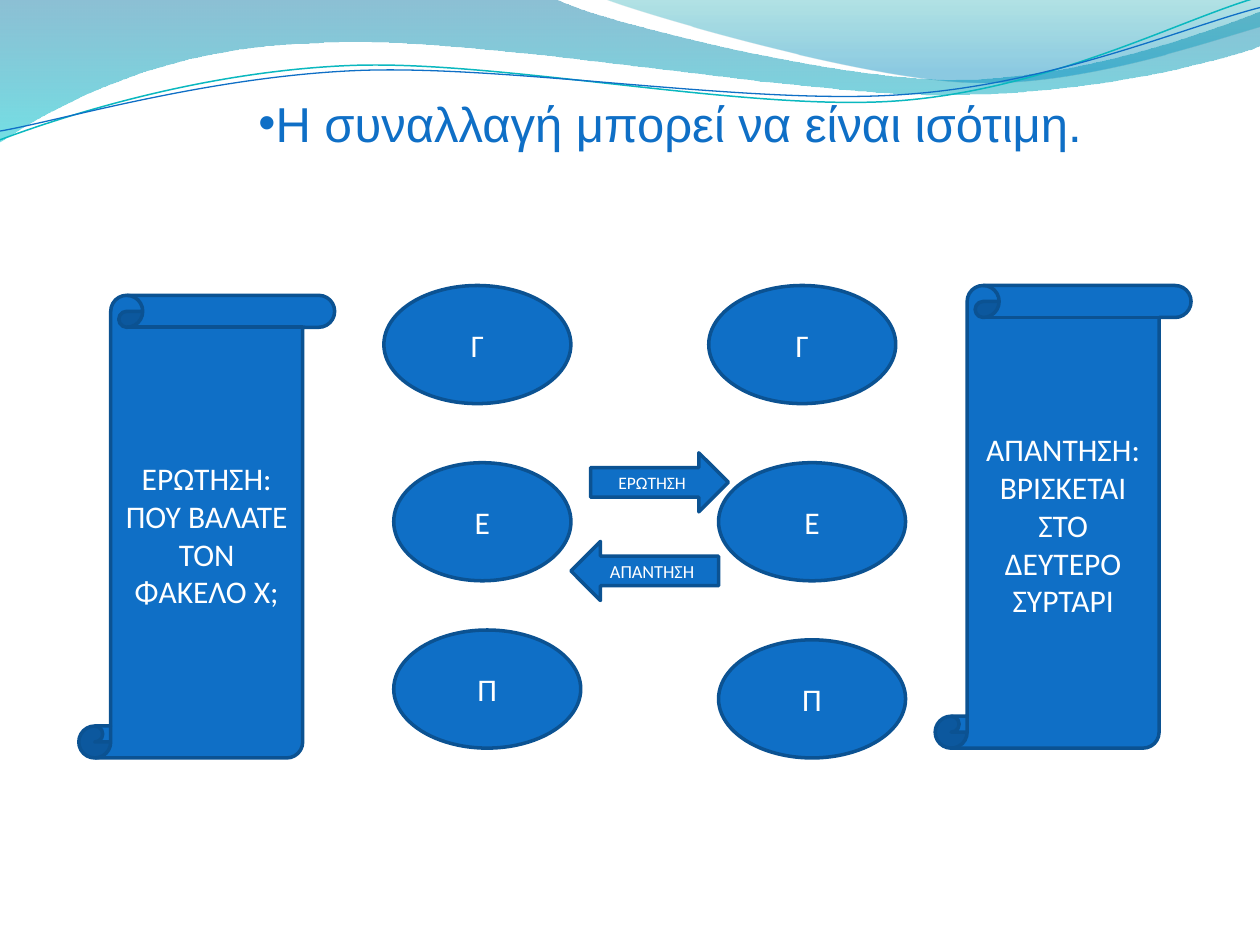
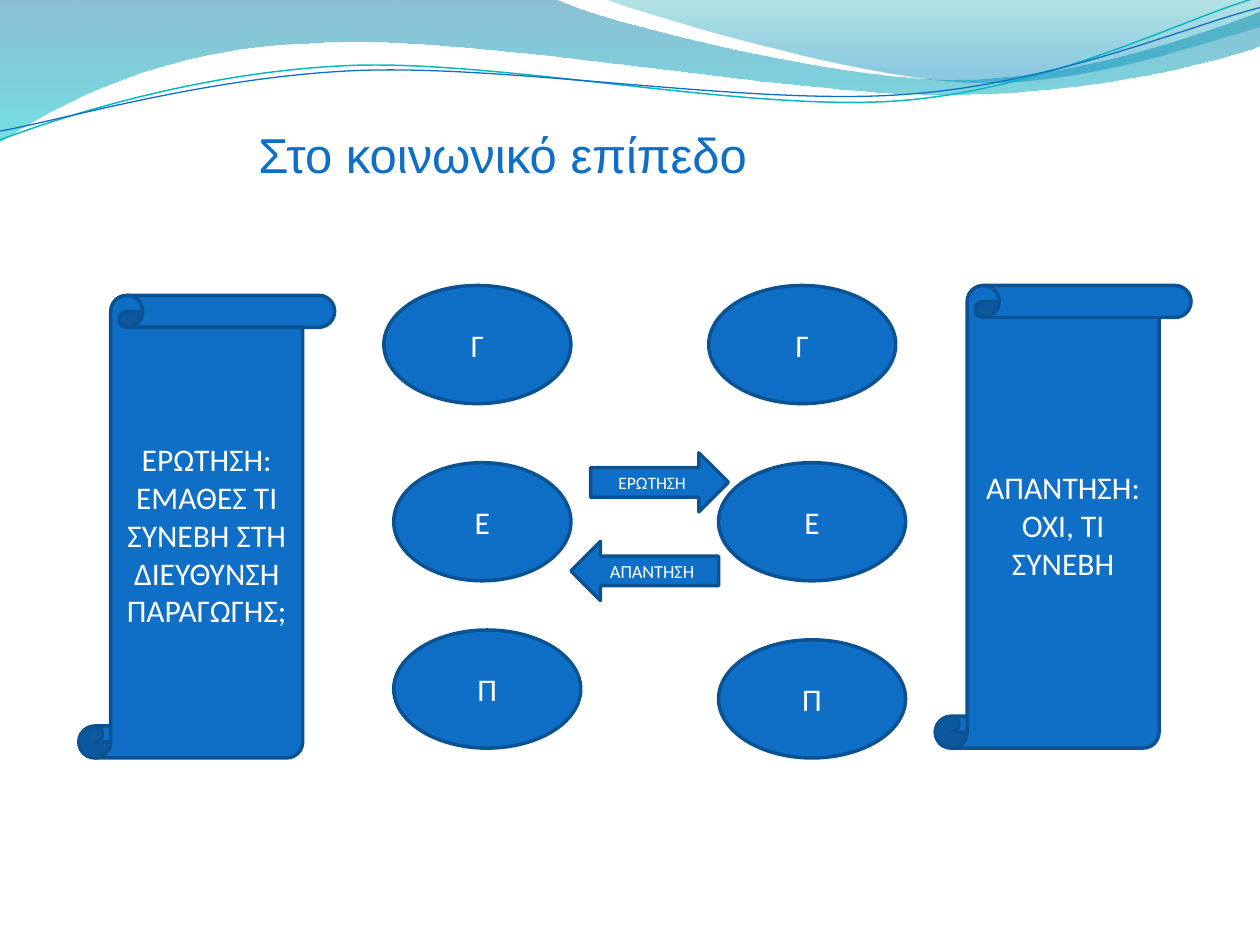
import math
from typing import NamedTuple

from lxml import etree
from pptx import Presentation, slide as sl, util as u
from pptx.dml import color
from pptx.enum import shapes, text
from pptx.oxml import ns
from pptx.shapes import autoshape as auto
from pptx.text import text as tx

BLUE = color.RGBColor(0x0F, 0x6F, 0xC6)
NAVY = color.RGBColor(0x0B, 0x52, 0x92)
TEAL = color.RGBColor(0x0A, 0xB8, 0xBF)
WHITE = color.RGBColor(0xFF, 0xFF, 0xFF)
DEEP = color.RGBColor(0x00, 0x74, 0xA1)
AQUA = color.RGBColor(0x00, 0xC6, 0xCF)
SEA = color.RGBColor(0x00, 0xA1, 0xA9)
SKY = color.RGBColor(0x00, 0x8B, 0xBF)

WIDE, HIGH = u.Inches(10), u.Inches(7.5)
COLS, ROWS = 128, 96
SHARE = WIDE / 100
TILT = 2.7

KIND = shapes.MSO_SHAPE


class Cell(NamedTuple):
    col: float
    row: float
    cols: float
    rows: float

    def box(self) -> tuple[int, int, int, int]:
        wide, high = WIDE / COLS, HIGH / ROWS
        return (round(self.col * wide), round(self.row * high),
                round(self.cols * wide), round(self.rows * high))


class Stop(NamedTuple):
    place: float
    tone: color.RGBColor
    alpha: int


class Wave(NamedTuple):
    start: tuple[float, float]
    steps: list[tuple[float, ...]]
    stops: tuple[Stop, ...] = ()
    tone: color.RGBColor = BLUE
    thick: float = 0
    tilt: float = 0
    hub: tuple[float, float] = (0, 0)


class Node(NamedTuple):
    kind: shapes.MSO_SHAPE
    cell: Cell
    words: str
    size: float = 18


class Page(NamedTuple):
    title: str
    cell: Cell
    dot: bool
    foot: float
    ask: str
    reply: str


WAVES = [
    Wave((0, 0), [
        (44, -0.1), (47.6, 1.7, 66.4, 6.3, 75.8, 6.3), (85.3, 6.3, 95.8, 2.6, 100, 0.9),
        (100.1, 3.6), (98.3, 4.4, 87, 7.6, 74.6, 7.5), (62.2, 7.5, 38.2, 2.8, 25.7, 3.4),
        (12.9, 3.6, 4.6, 8.3, -0.1, 11.3), (0, 0),
    ], stops=(Stop(0, DEEP, 45), Stop(1, AQUA, 55))),
    Wave((47.9, -0.1), [
        (50.9, 1.1, 68.2, 6.2, 76.9, 6.5), (85.6, 6.9, 96.1, 3.2, 100, 2.1), (100, 0),
        (47.9, -0.1),
    ], stops=(Stop(0, SEA, 30), Stop(0.8, SKY, 45))),
    Wave((0, 11.1), [
        (4.8, 9.3, 15.8, 5.7, 27.7, 5.2), (39.5, 4.7, 59.3, 8.9, 71.3, 8),
        (83.3, 7.1, 93.8, 1.5, 99.8, -0.2),
    ], tone=TEAL, thick=0.85, tilt=TILT, hub=(49.9, 5.75)),
    Wave((0, 10.4), [
        (4.7, 9.6, 16.4, 6.1, 28.3, 5.6), (40.3, 5.1, 59.7, 8.4, 71.7, 7.5),
        (83.6, 6.7, 94.1, 2.1, 100, 0.6),
    ], tone=BLUE, thick=0.75, tilt=TILT, hub=(49.95, 5.9)),
]

NODES = [
    Node(KIND.OVAL, Cell(39, 29, 19, 12), "Γ"),
    Node(KIND.OVAL, Cell(40, 47, 18, 12), "Ε"),
    Node(KIND.OVAL, Cell(40, 64, 19, 12), "Π"),
    Node(KIND.OVAL, Cell(73, 65, 19, 12), "Π"),
    Node(KIND.OVAL, Cell(73, 47, 19, 12), "Ε"),
    Node(KIND.OVAL, Cell(72, 29, 19, 12), "Γ"),
    Node(KIND.RIGHT_ARROW, Cell(60, 46, 14, 6), "ΕΡΩΤΗΣΗ", 10),
    Node(KIND.LEFT_ARROW, Cell(58, 55, 15, 6), "ΑΠΑΝΤΗΣΗ", 10.5),
]
LEFT = Cell(8, 30, 26, 47)
RIGHT = Cell(95, 29, 26, 47)

PAGES = [
    Page("Η συναλλαγή μπορεί να είναι ισότιμη.", Cell(25, 5, 87, 15.1), True, 0.06,
         "ΕΡΩΤΗΣΗ: ΠΟΥ ΒΑΛΑΤΕ ΤΟΝ ΦΑΚΕΛΟ Χ;",
         "ΑΠΑΝΤΗΣΗ: ΒΡΙΣΚΕΤΑΙ ΣΤΟ ΔΕΥΤΕΡΟ ΣΥΡΤΑΡΙ"),
    Page("Στο κοινωνικό επίπεδο", Cell(25, 12, 87, 11.3), False, 0.36,
         "ΕΡΩΤΗΣΗ: ΕΜΑΘΕΣ ΤΙ ΣΥΝΕΒΗ ΣΤΗ ΔΙΕΥΘΥΝΣΗ ΠΑΡΑΓΩΓΗΣ;",
         "ΑΠΑΝΤΗΣΗ: ΟΧΙ, ΤΙ ΣΥΝΕΒΗ"),
]


def trace(wave: Wave) -> list[tuple[float, float]]:
    spots = [wave.start]
    for step in wave.steps:
        spots += zip(step[::2], step[1::2])
    angle = math.radians(wave.tilt)
    sin, cos = math.sin(angle), math.cos(angle)
    left, top = wave.hub
    return [((left + (x - left) * cos - (y - top) * sin) * SHARE,
             (top + (x - left) * sin + (y - top) * cos) * SHARE) for x, y in spots]


def bend(shape: auto.Shape, steps: list[tuple[float, ...]]) -> None:
    lines = iter(list(shape._element.iter(ns.qn("a:lnTo"))))
    for step in steps:
        first = next(lines)
        if len(step) == 6:
            first.tag = ns.qn("a:cubicBezTo")
            for _ in range(2):
                extra = next(lines)
                first.append(extra[0])
                extra.getparent().remove(extra)


def blend(shape: auto.Shape, stops: tuple[Stop, ...]) -> None:
    shape.fill.gradient()
    shape.fill.gradient_angle = 270
    for mark, stop in zip(shape.fill.gradient_stops, stops):
        mark.position = stop.place
        mark.color.rgb = stop.tone
    tones = shape._element.spPr.iter(ns.qn("a:srgbClr"))
    for tone, stop in zip(tones, stops):
        etree.SubElement(tone, ns.qn("a:alpha"), val=str(stop.alpha * 1000))


def draw_wave(slide: sl.Slide, wave: Wave) -> None:
    first, *rest = trace(wave)
    pen = slide.shapes.build_freeform(*first, scale=1.0)
    pen.add_line_segments(rest, close=bool(wave.stops))
    shape = pen.convert_to_shape()
    bend(shape, wave.steps)
    shape.rotation = -wave.tilt
    shape.shadow.inherit = False
    if wave.stops:
        shape.line.fill.background()
        blend(shape, wave.stops)
    else:
        shape.fill.background()
        shape.line.color.rgb = wave.tone
        shape.line.width = u.Pt(wave.thick)


def write(frame: tx.TextFrame, words: str, size: float, font: str,
          tone: color.RGBColor, align: text.PP_ALIGN) -> None:
    frame.word_wrap = True
    frame.vertical_anchor = text.MSO_ANCHOR.MIDDLE
    line = frame.paragraphs[0]
    line.alignment = align
    run = line.add_run()
    run.text = words
    run.font.size = u.Pt(size)
    run.font.name = font
    run.font.color.rgb = tone


def draw_node(slide: sl.Slide, node: Node) -> None:
    shape = slide.shapes.add_shape(node.kind, *node.cell.box())
    shape.shadow.inherit = False
    shape.fill.solid()
    shape.fill.fore_color.rgb = BLUE
    shape.line.color.rgb = NAVY
    shape.line.width = u.Pt(2)
    write(shape.text_frame, node.words, node.size, "Calibri", WHITE, text.PP_ALIGN.CENTER)


def draw_title(slide: sl.Slide, page: Page) -> None:
    frame = slide.shapes.add_textbox(*page.cell.box()).text_frame
    frame.margin_bottom = u.Inches(page.foot)
    write(frame, page.title, 28, "Arial", BLUE, text.PP_ALIGN.LEFT)
    if page.dot:
        props = frame.paragraphs[0]._p.get_or_add_pPr()
        props.set("marL", "0")
        props.set("indent", "0")
        etree.SubElement(props, ns.qn("a:buFont"), typeface="Arial")
        etree.SubElement(props, ns.qn("a:buChar"), char="•")


def main() -> None:
    deck = Presentation()
    deck.slide_width, deck.slide_height = WIDE, HIGH
    for page in PAGES:
        slide = deck.slides.add_slide(deck.slide_layouts[6])
        for wave in WAVES:
            draw_wave(slide, wave)
        draw_title(slide, page)
        scrolls = [Node(KIND.VERTICAL_SCROLL, LEFT, page.ask),
                   Node(KIND.VERTICAL_SCROLL, RIGHT, page.reply)]
        for node in NODES + scrolls:
            draw_node(slide, node)
    deck.save("out.pptx")


if __name__ == "__main__":
    main()
